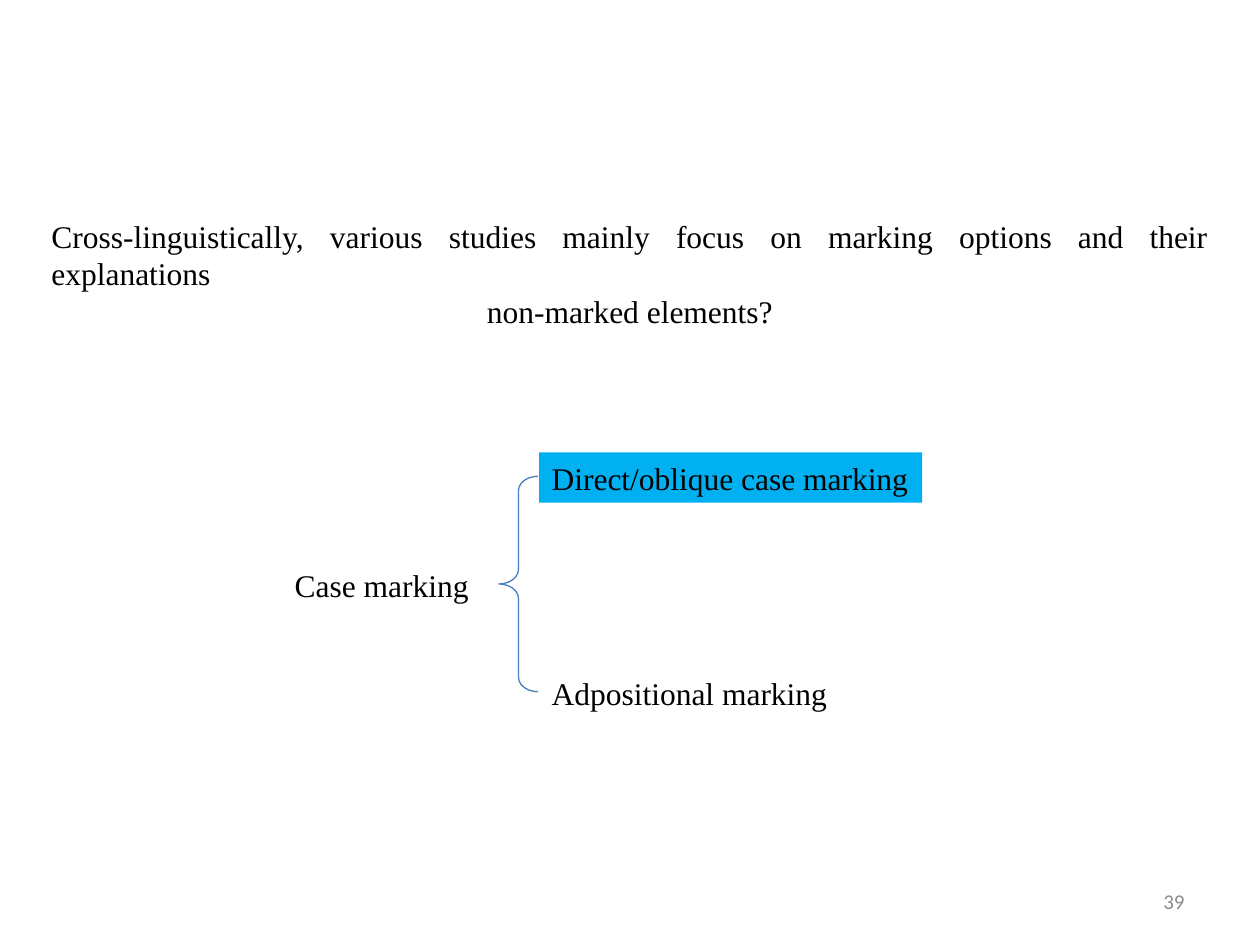
from pptx import Presentation
from pptx.dml.color import RGBColor
from pptx.enum.shapes import MSO_SHAPE
from pptx.enum.text import MSO_ANCHOR, PP_ALIGN
from pptx.util import Inches, Pt

LEFT, CENTER, RIGHT = PP_ALIGN.LEFT, PP_ALIGN.CENTER, PP_ALIGN.RIGHT
JUSTIFY = PP_ALIGN.JUSTIFY
MIDDLE = MSO_ANCHOR.MIDDLE
LEFT_BRACE = MSO_SHAPE.LEFT_BRACE

COLORS = {
    "text": "000000",
    "highlight": "00B0F0",
    "brace": "4B7EBC",
    "number": "8C8C8C",
}


def add_text(page, place, lines, font="Times New Roman", size=18, color="text"):
    """Add a text box; lines holds (text, alignment) pairs, one per paragraph."""
    box = page.shapes.add_textbox(*map(Inches, place))
    frame = box.text_frame
    frame.word_wrap = True
    for index, (text, alignment) in enumerate(lines):
        para = frame.add_paragraph() if index else frame.paragraphs[0]
        para.text = text
        para.alignment = alignment
        para.font.name = font
        para.font.size = Pt(size)
        para.font.color.rgb = RGBColor.from_string(COLORS[color])
    return box


deck = Presentation()
deck.slide_width, deck.slide_height = Inches(10), Inches(7.5)
page = deck.slides.add_slide(deck.slide_layouts[6])

add_text(page, (0.31, 1.67, 9.38, 1.01), [
    ("Cross-linguistically, various studies mainly focus on marking options "
     "and their explanations", JUSTIFY),
    ("non-marked elements?", CENTER),
])

# Case marking and its two branches
add_text(page, (2.24, 4.44, 1.72, 0.4), [("Case marking", LEFT)])
direct = add_text(page, (4.28, 3.59, 3.04, 0.4),
                  [("Direct/oblique case marking", LEFT)])
direct.fill.solid()
direct.fill.fore_color.rgb = RGBColor.from_string(COLORS["highlight"])
add_text(page, (4.28, 5.3, 2.85, 0.4), [("Adpositional marking", LEFT)])

brace = page.shapes.add_shape(
    LEFT_BRACE, Inches(3.96), Inches(3.78), Inches(0.31), Inches(1.71))
brace.adjustments[0] = 0.37
brace.adjustments[1] = 0.5
brace.shadow.inherit = False
brace.fill.background()
brace.line.color.rgb = RGBColor.from_string(COLORS["brace"])
brace.line.width = Pt(0.75)

number = add_text(page, (7.17, 6.95, 2.33, 0.4), [("39", RIGHT)],
                  font="Calibri", size=12, color="number")
number.text_frame.vertical_anchor = MIDDLE

deck.save("out.pptx")
